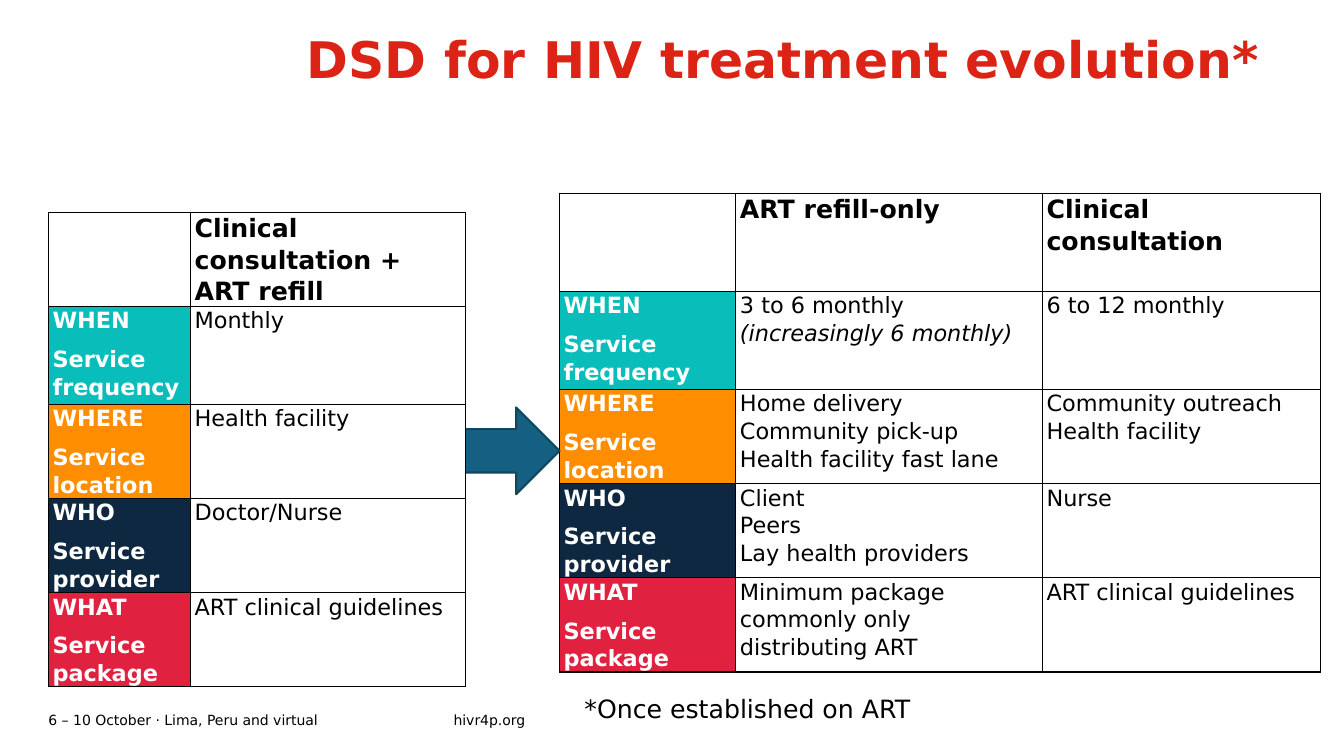
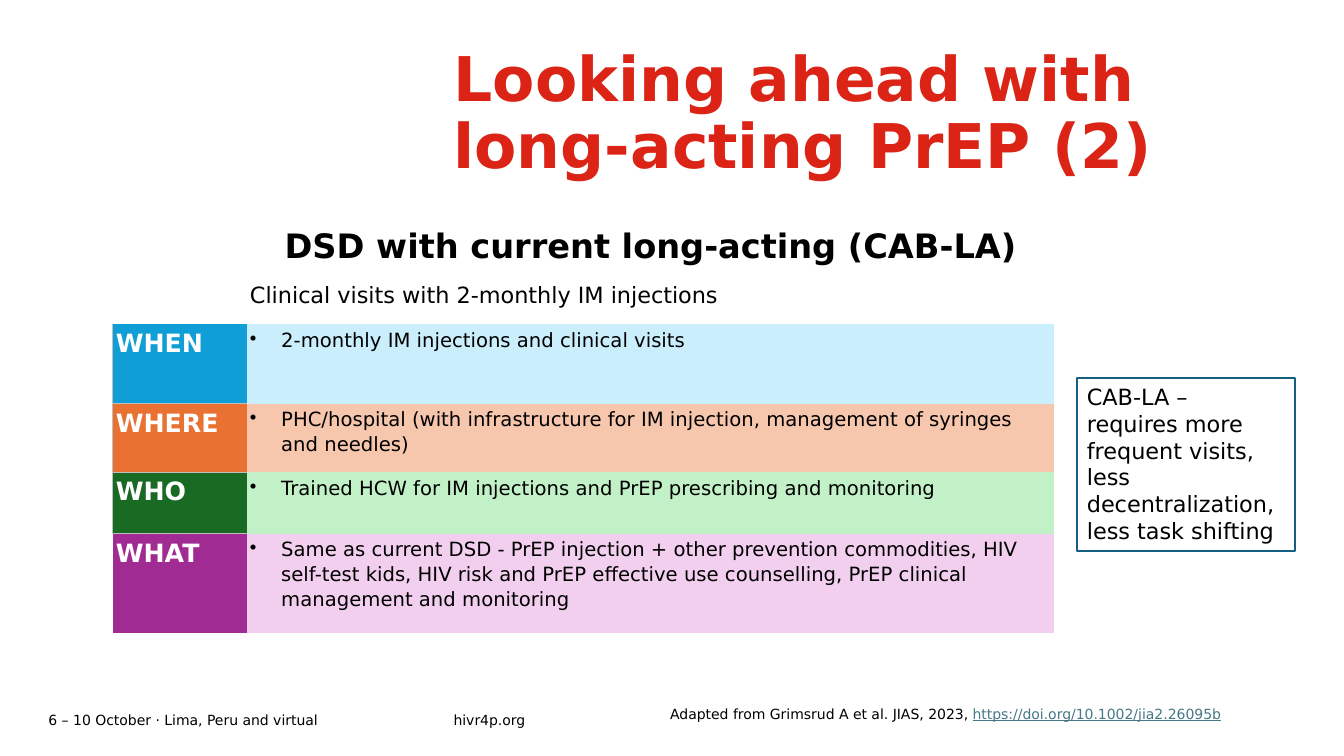
from dataclasses import dataclass
from typing import Any, NamedTuple, Optional, Sequence

from lxml.etree import SubElement
from pptx import Presentation
from pptx.dml.color import RGBColor
from pptx.enum.shapes import MSO_SHAPE
from pptx.enum.text import MSO_ANCHOR, MSO_AUTO_SIZE, PP_ALIGN
from pptx.oxml.ns import qn
from pptx.util import Pt


@dataclass(frozen=True)
class Theme:
    font: str = "DejaVu Sans"
    black: str = "000000"
    white: str = "FFFFFF"
    title: str = "DB2415"
    accent: str = "156082"
    arrow_edge: str = "104760"
    link: str = "467886"
    rule: str = "BFBFBF"
    small: float = 10
    bullet: float = 14
    body: float = 16
    head: float = 18
    banner: float = 24
    plain_table: str = "{2D5ABB26-0587-4C30-8999-92F81FD0307C}"


THEME = Theme()


class Frame(NamedTuple):
    left: float
    top: float
    width: float
    height: float


class Span(NamedTuple):
    text: str
    size: float = THEME.body
    color: str = THEME.black
    bold: bool = False
    italic: bool = False
    underline: bool = False


class Para(NamedTuple):
    spans: Sequence[Span]
    after: float = 0
    spacing: Optional[float] = None
    align: PP_ALIGN = PP_ALIGN.LEFT
    indent: float = 0


class Cell(NamedTuple):
    paras: Sequence[Para] = ()
    fill: Optional[str] = THEME.white
    border: str = ""
    edges: str = ""


class Grid(NamedTuple):
    left: float
    top: float
    columns: Sequence[float]
    rows: Sequence[float]
    cells: Sequence[Sequence[Cell]]
    inset_x: float
    inset_y: float


class Service(NamedTuple):
    name: str
    detail: str
    color: str


class Band(NamedTuple):
    name: str
    text: str
    color: str
    tint: str
    edges: str


SERVICES = (
    Service("WHEN", "Service frequency", "08BDBA"),
    Service("WHERE", "Service location", "FF8D00"),
    Service("WHO", "Service provider", "0E2841"),
    Service("WHAT", "Service package", "E02140"),
)
BANDS = (
    Band("WHEN", "2-monthly IM injections and clinical visits", "0F9ED5", "CAEEFB", "LB"),
    Band("WHERE", "PHC/hospital (with infrastructure for IM injection, management of "
         "syringes and needles)", "E97132", "F6C6AD", "LTB"),
    Band("WHO", "Trained HCW for IM injections and PrEP prescribing and monitoring",
         "196B24", "C2F1C8", "LT"),
    Band("WHAT", "Same as current DSD - PrEP injection + other prevention commodities, "
         "HIV self-test kids, HIV risk and PrEP effective use counselling, PrEP clinical "
         "management and monitoring", "A02B93", "F2CFEE", ""),
)
FOOTERS = (
    (Frame(34.6, 505.4, 289.4, 17.3), "6 – 10 October · Lima, Peru and virtual"),
    (Frame(324, 505.4, 139, 17.3), "hivr4p.org"),
)


def set_all(target: Any, values: dict[str, Any]) -> None:
    for name, value in values.items():
        setattr(target, name, value)


def place(shape: Any, frame: Frame) -> None:
    set_all(shape, {name: Pt(value) for name, value in frame._asdict().items()})


def paint(fill: Any, color: str) -> None:
    fill.solid()
    fill.fore_color.rgb = RGBColor.from_string(color)


def write(text_frame: Any, paras: Sequence[Para]) -> None:
    for index, para in enumerate(paras):
        paragraph = text_frame.add_paragraph() if index else text_frame.paragraphs[0]
        if para.indent:
            properties = paragraph._p.get_or_add_pPr()
            properties.set("marL", str(Pt(para.indent)))
            properties.set("indent", str(-Pt(para.indent)))
            SubElement(properties, qn("a:buChar")).set("char", "•")
        set_all(paragraph, {
            "alignment": para.align,
            "line_spacing": para.spacing,
            "space_before": Pt(0),
            "space_after": Pt(para.after),
        })
        for span in para.spans:
            run = paragraph.add_run()
            run.text = span.text
            set_all(run.font, {
                "name": THEME.font,
                "size": Pt(span.size),
                "bold": span.bold,
                "italic": span.italic,
                "underline": span.underline,
            })
            run.font.color.rgb = RGBColor.from_string(span.color)


def fill_frame(text_frame: Any, paras: Sequence[Para], inset: bool = True,
               anchor: MSO_ANCHOR = MSO_ANCHOR.TOP) -> None:
    set_all(text_frame, {
        "word_wrap": True,
        "auto_size": MSO_AUTO_SIZE.NONE,
        "vertical_anchor": anchor,
        "margin_left": Pt(7.2 * inset),
        "margin_right": Pt(7.2 * inset),
        "margin_top": Pt(3.6 * inset),
        "margin_bottom": Pt(3.6 * inset),
    })
    write(text_frame, paras)


def add_text(page: Any, frame: Frame, spans: Sequence[Span], inset: bool = True,
             anchor: MSO_ANCHOR = MSO_ANCHOR.TOP) -> Any:
    box = page.shapes.add_textbox(*map(Pt, frame))
    fill_frame(box.text_frame, [Para(spans)], inset, anchor)
    return box


def add_title(page: Any, frame: Frame, text: str, size: float) -> None:
    title = page.shapes.title
    place(title, frame)
    span = Span(text, size, THEME.title, bold=True)
    fill_frame(title.text_frame, [Para([span], spacing=0.9)], inset=False)


def add_preset(page: Any, kind: MSO_SHAPE, frame: Frame, fill: str, line: str) -> Any:
    shape = page.shapes.add_shape(kind, *map(Pt, frame))
    shape.shadow.inherit = False
    paint(shape.fill, fill)
    paint(shape.line.fill, line)
    shape.line.width = Pt(1.5)
    return shape


def add_grid(page: Any, grid: Grid) -> None:
    frame = page.shapes.add_table(
        len(grid.rows), len(grid.columns), Pt(grid.left), Pt(grid.top),
        Pt(sum(grid.columns)), Pt(sum(grid.rows)))
    table = frame.table
    set_all(table, {"first_row": False, "horz_banding": False})
    for style in frame.element.iter(qn("a:tableStyleId")):
        style.text = THEME.plain_table
    for column, width in zip(table.columns, grid.columns):
        column.width = Pt(width)
    for row, height, cells in zip(table.rows, grid.rows, grid.cells):
        row.height = Pt(height)
        for target, cell in zip(row.cells, cells):
            set_all(target, {
                "margin_left": Pt(grid.inset_x),
                "margin_right": Pt(grid.inset_x),
                "margin_top": Pt(grid.inset_y),
                "margin_bottom": Pt(grid.inset_y),
            })
            for edge in cell.edges:
                line = SubElement(target._tc.get_or_add_tcPr(), qn(f"a:ln{edge}"))
                line.set("w", str(Pt(1)))
                solid = SubElement(line, qn("a:solidFill"))
                SubElement(solid, qn("a:srgbClr")).set("val", cell.border)
            if cell.fill:
                paint(target.fill, cell.fill)
            write(target.text_frame, cell.paras)


def cell_para(text: str, after: float = 8, align: PP_ALIGN = PP_ALIGN.LEFT,
              indent: float = 0, **style: Any) -> Para:
    return Para([Span(text, **style)], after, 1.07, align, indent)


def boxed(paras: Sequence[Para], fill: Optional[str] = THEME.white) -> Cell:
    return Cell(paras, fill, THEME.black, "LRTB")


def service_cells(heads: Sequence[str], answers: Sequence[Sequence[str]]) -> list[list[Cell]]:
    rows = [[boxed([], None)] + [
        boxed([cell_para(head, size=THEME.head, bold=True)]) for head in heads]]
    for service, texts in zip(SERVICES, answers):
        label = [cell_para(text, color=THEME.white, bold=True)
                 for text in (service.name, service.detail)]
        rows.append([boxed(label, service.color)] + [
            boxed([cell_para(line, after=0, italic=line.startswith("("))
                   for line in text.split("\n")]) for text in texts])
    return rows


def band_cells() -> list[list[Cell]]:
    rows = [
        [Cell(), Cell([cell_para("DSD with current long-acting (CAB-LA)",
                                 align=PP_ALIGN.CENTER, size=THEME.banner, bold=True)])],
        [Cell(), Cell([cell_para("Clinical visits with 2-monthly IM injections")])],
    ]
    for band in BANDS:
        label = cell_para(band.name, size=THEME.head, color=THEME.white, bold=True)
        detail = cell_para(band.text, indent=22.3, size=THEME.bullet)
        rows.append([Cell([label], band.color, THEME.rule, band.edges),
                     Cell([detail], band.tint)])
    return rows


def add_footers(layout: Any, page: Any) -> None:
    for holder in list(layout.placeholders)[1:]:
        layout.shapes.element.remove(holder.element)
    boxes = [add_text(page, frame, [Span(text, THEME.small)], False, MSO_ANCHOR.MIDDLE)
             for frame, text in FOOTERS]
    for box in boxes:
        layout.shapes.element.append(box.element)


def build_treatment(page: Any) -> None:
    add_title(page, Frame(219, 25.2, 706, 96.5), "DSD for HIV treatment evolution*", 36)
    add_grid(page, Grid(399.6, 138.2, (126, 219, 198.7), (70, 70, 67, 67, 67), service_cells(
        ("ART refill-only", "Clinical consultation"),
        (("3 to 6 monthly\n(increasingly 6 monthly)", "6 to 12 monthly"),
         ("Home delivery\nCommunity pick-up\nHealth facility fast lane",
          "Community outreach\nHealth facility"),
         ("Client\nPeers\nLay health providers", "Nurse"),
         ("Minimum package commonly only distributing ART", "ART clinical guidelines"))),
        3, 0))
    add_preset(page, MSO_SHAPE.RIGHT_ARROW, Frame(319.7, 291, 80, 62),
               THEME.accent, THEME.arrow_edge)
    add_grid(page, Grid(34.6, 151.7, (101.5, 196.6), (67, 70, 67, 67, 67), service_cells(
        ("Clinical consultation + ART refill",),
        (("Monthly",), ("Health facility",), ("Doctor/Nurse",),
         ("ART clinical guidelines",))), 3, 0))
    add_text(page, Frame(410.4, 491.8, 515, 29), [Span("*Once established on ART", THEME.head)])


def build_prep(page: Any) -> None:
    add_title(page, Frame(324, 34.6, 601, 96.5), "Looking ahead with long-acting PrEP (2)", 44)
    add_grid(page, Grid(80.6, 158.4, (95.8, 576.7), (40.3, 33, 56.7, 49, 44, 70.5),
                        band_cells(), 2.2, 2.2))
    add_text(page, Frame(471.6, 500.4, 471.6, 19.4), [
        Span("Adapted from Grimsrud A et al. JIAS, 2023, ", THEME.small),
        Span("https://doi.org/10.1002/jia2.26095b", THEME.small, THEME.link, underline=True)])
    note = add_preset(page, MSO_SHAPE.RECTANGLE, Frame(769.3, 270, 155.9, 123.8),
                      THEME.white, THEME.accent)
    fill_frame(note.text_frame, [Para([Span(
        "CAB-LA – requires more frequent visits, less decentralization, less task shifting")])])


def main() -> None:
    deck = Presentation()
    set_all(deck, {"slide_width": Pt(960), "slide_height": Pt(540)})
    layout = deck.slide_layouts[5]
    pages = [deck.slides.add_slide(layout) for _ in range(2)]
    add_footers(layout, pages[0])
    for build, page in zip((build_treatment, build_prep), pages):
        build(page)
    deck.save("out.pptx")


if __name__ == "__main__":
    main()
